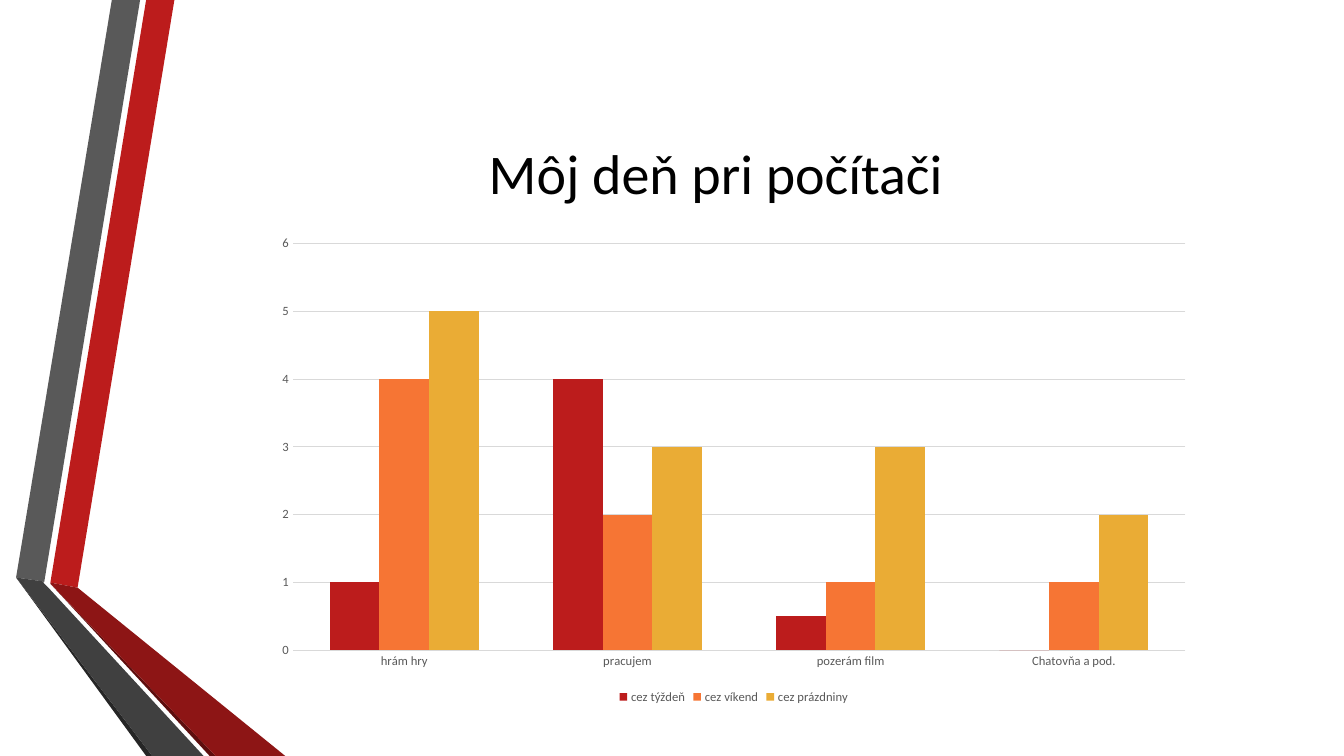
from pptx import Presentation
from pptx.chart.data import CategoryChartData
from pptx.dml.color import RGBColor
from pptx.enum.chart import XL_CHART_TYPE as ChartType
from pptx.enum.chart import XL_LEGEND_POSITION as LegendPosition
from pptx.enum.chart import XL_TICK_MARK as TickMark
from pptx.enum.text import MSO_ANCHOR, PP_ALIGN
from pptx.util import Inches, Pt

WIDTH, HEIGHT = Inches(13.33), Inches(7.5)
FONT = "Calibri"
GREY_TEXT, GRID_GREY = "595959", "D9D9D9"

# Ribbon outlines, in hundredths of an inch
RIBBONS = [
    ("BC1C1C", [(50, 578), (77, 583), (173, 0), (145, 0)]),
    ("595959", [(139, 0), (111, 0), (16, 573), (44, 577)]),
    ("262626", [(16, 573), (145, 750), (151, 750)]),
    ("5E0E0E", [(50, 579), (208, 750), (214, 750)]),
    ("8D1515", [(50, 578), (50, 579), (214, 750), (283, 750), (77, 583)]),
    ("404040", [(16, 573), (151, 750), (202, 750), (48, 583), (43, 578), (44, 577)]),
]

ACTIVITIES = ["hrám hry", "pracujem", "pozerám film", "Chatovňa a pod."]
HOURS = [
    ("cez týždeň", "BC1C1C", (1, 4, 0.5, 0)),
    ("cez víkend", "F67534", (4, 2, 1, 1)),
    ("cez prázdniny", "EAAC35", (5, 3, 3, 2)),
]


def rgb(hex_color):
    return RGBColor.from_string(hex_color)


def box(left, top, width, height):
    """Turn shares of the slide's size into lengths."""
    return (int(left * WIDTH), int(top * HEIGHT),
            int(width * WIDTH), int(height * HEIGHT))


def style_font(font, size, color):
    font.name = FONT
    font.size = Pt(size)
    font.color.rgb = rgb(color)


def add_ribbon(slide, color, outline):
    builder = slide.shapes.build_freeform(*outline[0], scale=Inches(0.01))
    builder.add_line_segments(outline[1:], close=True)
    ribbon = builder.convert_to_shape()
    ribbon.shadow.inherit = False
    ribbon.fill.solid()
    ribbon.fill.fore_color.rgb = rgb(color)
    ribbon.line.fill.background()


def set_title(slide, text):
    title = slide.shapes.title
    title.left, title.top, title.width, title.height = box(0.1215, 0.1, 0.822, 0.256)
    frame = title.text_frame
    frame.vertical_anchor = MSO_ANCHOR.MIDDLE
    paragraph = frame.paragraphs[0]
    paragraph.alignment = PP_ALIGN.CENTER
    run = paragraph.add_run()
    run.text = text
    style_font(run.font, 40, "000000")


def style_axis(axis):
    axis.major_tick_mark = axis.minor_tick_mark = TickMark.NONE
    axis.format.line.fill.background()
    style_font(axis.tick_labels.font, 9, GREY_TEXT)


def add_hours_chart(slide):
    hours = CategoryChartData()
    hours.categories = ACTIVITIES
    for period, _, values in HOURS:
        hours.add_series(period, values)
    chart = slide.shapes.add_chart(
        ChartType.COLUMN_CLUSTERED, *box(0.196, 0.3, 0.7, 0.637), hours).chart
    style_font(chart.font, 10, "000000")
    chart.has_title = False

    style_axis(chart.category_axis)
    scale = chart.value_axis
    style_axis(scale)
    scale.minimum_scale, scale.maximum_scale, scale.major_unit = 0, 6, 1
    grid = scale.major_gridlines.format.line
    grid.color.rgb = rgb(GRID_GREY)
    grid.width = Pt(0.75)

    chart.has_legend = True
    chart.legend.position = LegendPosition.BOTTOM
    chart.legend.include_in_layout = False
    style_font(chart.legend.font, 9, GREY_TEXT)

    columns = chart.plots[0]
    columns.gap_width = 150
    columns.overlap = 0
    columns.vary_by_categories = False
    for series, (_, color, _) in zip(columns.series, HOURS):
        series.format.fill.solid()
        series.format.fill.fore_color.rgb = rgb(color)


def main():
    deck = Presentation()
    deck.slide_width, deck.slide_height = WIDTH, HEIGHT
    slide = deck.slides.add_slide(deck.slide_layouts.get_by_name("Title Only"))
    for color, outline in RIBBONS:
        add_ribbon(slide, color, outline)
    set_title(slide, "Môj deň pri počítači")
    add_hours_chart(slide)
    deck.save("out.pptx")


if __name__ == "__main__":
    main()
